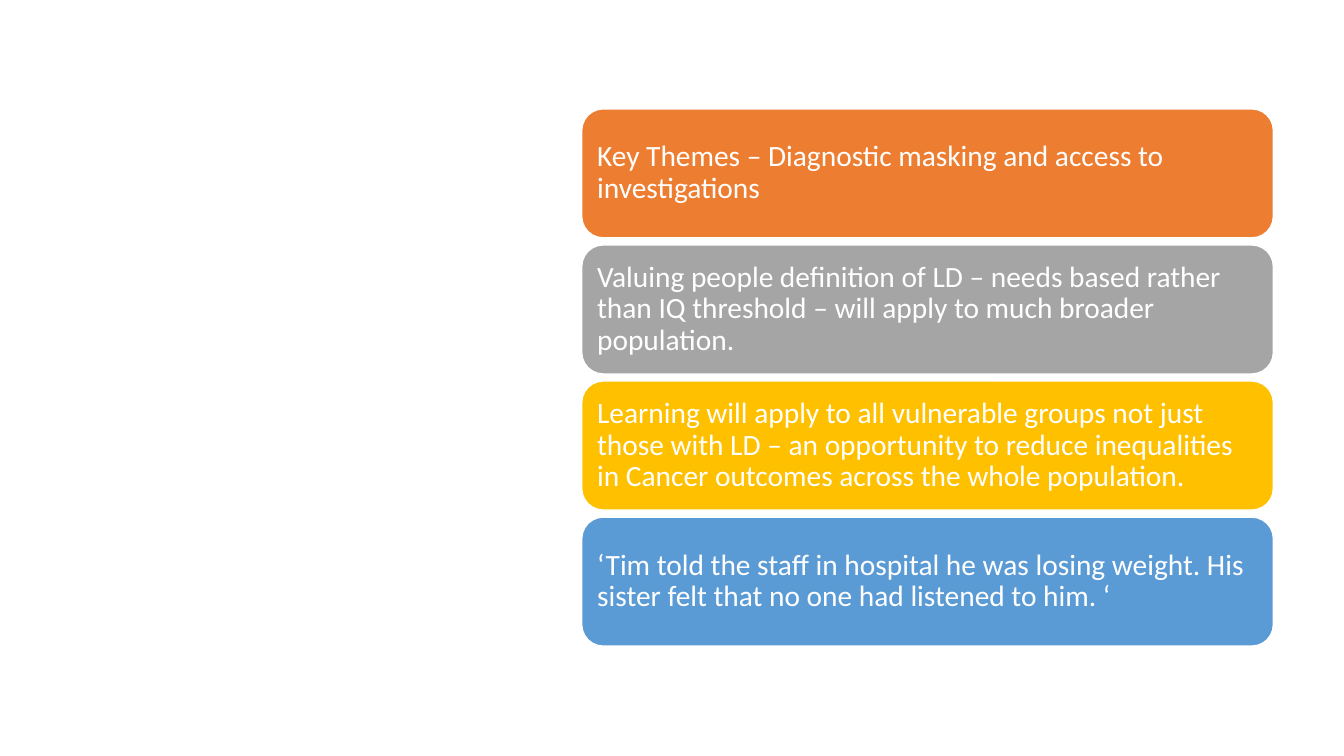
from dataclasses import dataclass

from pptx import Presentation
from pptx.dml.color import RGBColor
from pptx.enum.shapes import MSO_SHAPE
from pptx.enum.text import MSO_ANCHOR, PP_ALIGN
from pptx.util import Inches, Pt

ROUNDED = MSO_SHAPE.ROUNDED_RECTANGLE
MIDDLE = MSO_ANCHOR.MIDDLE
LEFT = PP_ALIGN.LEFT


@dataclass(frozen=True)
class Theme:
    font: str = "Calibri"
    size: float = 21
    white: str = "FFFFFF"
    orange: str = "ED7D31"
    grey: str = "A5A5A5"
    gold: str = "FFC000"
    blue: str = "5B9BD5"


THEME = Theme()

# Single-column grid, in inches
SLIDE_W, SLIDE_H = 13.33, 7.5
COL_LEFT, COL_WIDTH = 5.77, 6.86
ROW_TOP, ROW_HEIGHT, ROW_PITCH = 1.08, 1.28, 1.35
INSET = 0.09

THEMES = [
    (THEME.orange, "Key Themes – Diagnostic masking and access to investigations"),
    (THEME.grey, "Valuing people definition of LD – needs based rather than IQ "
                 "threshold – will apply to much broader population."),
    (THEME.gold, "Learning will apply to all vulnerable groups not just those with "
                 "LD – an opportunity to reduce inequalities in Cancer outcomes "
                 "across the whole population."),
    (THEME.blue, "‘Tim told the staff in hospital he was losing weight. His sister "
                 "felt that no one had listened to him. ‘"),
]


def rgb(colour):
    return RGBColor.from_string(colour)


def add_card(s, row, fill, text):
    """Add a rounded card with its text in the given row."""
    sp = s.shapes.add_shape(ROUNDED, Inches(COL_LEFT),
                            Inches(ROW_TOP + row * ROW_PITCH),
                            Inches(COL_WIDTH), Inches(ROW_HEIGHT))
    sp.shadow.inherit = False
    sp.fill.solid()
    sp.fill.fore_color.rgb = rgb(fill)
    sp.line.color.rgb = rgb(THEME.white)
    sp.line.width = Pt(1)
    write_text(sp.text_frame, text)


def write_text(tf, text):
    """Write one left-aligned paragraph, centred vertically."""
    tf.word_wrap = True
    tf.vertical_anchor = MIDDLE
    tf.margin_left = tf.margin_right = Inches(INSET)
    tf.margin_top = tf.margin_bottom = Inches(INSET)
    p = tf.paragraphs[0]
    p.alignment = LEFT
    p.line_spacing = 0.9
    r = p.add_run()
    r.text = text
    r.font.name = THEME.font
    r.font.size = Pt(THEME.size)
    r.font.color.rgb = rgb(THEME.white)


def main():
    prs = Presentation()
    prs.slide_width, prs.slide_height = Inches(SLIDE_W), Inches(SLIDE_H)
    s = prs.slides.add_slide(prs.slide_layouts[6])

    # Stack of key themes
    for row, (fill, text) in enumerate(THEMES):
        add_card(s, row, fill, text)

    prs.save("out.pptx")


if __name__ == "__main__":
    main()
